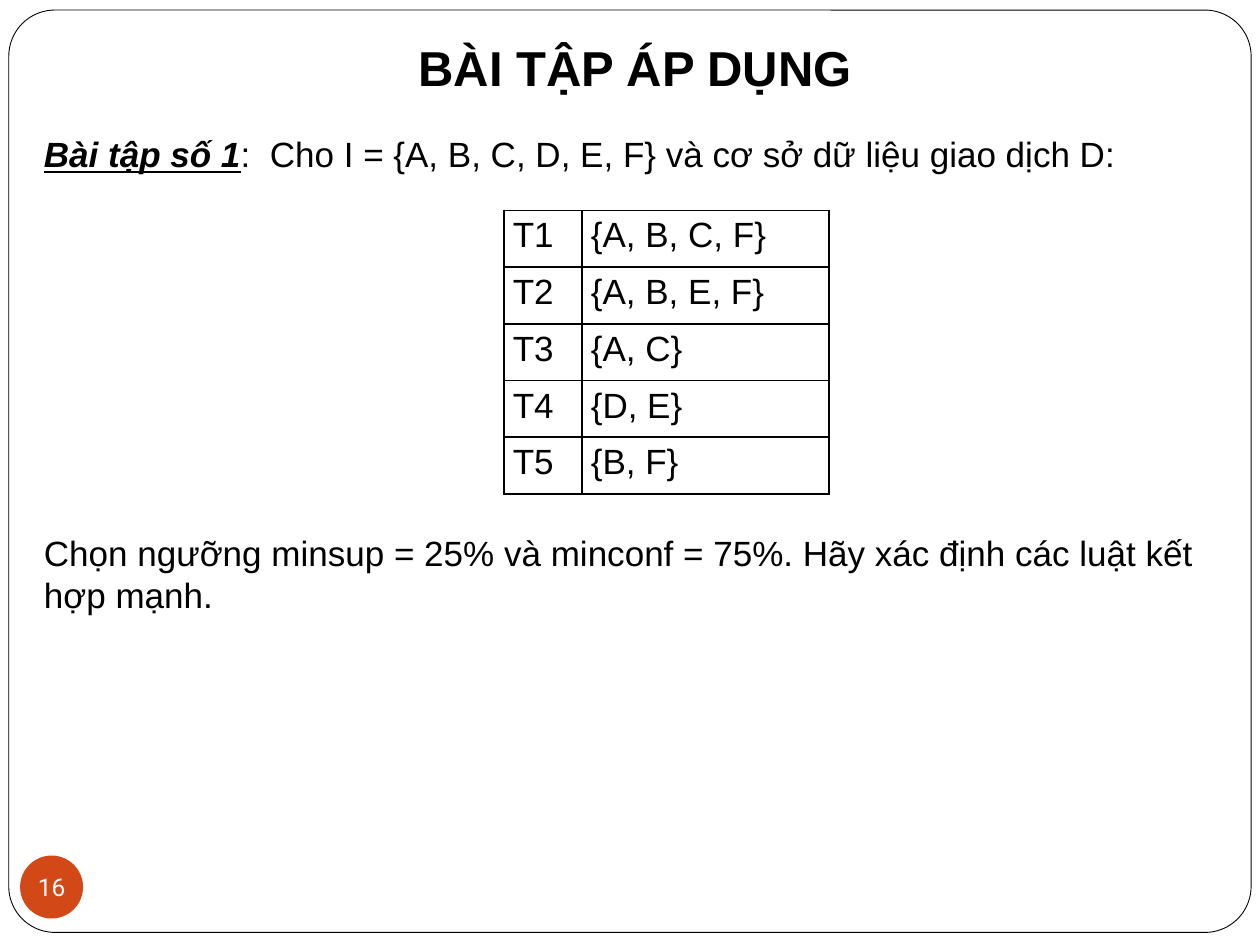
import pptx
import pptx.dml.color
import pptx.enum.shapes
import pptx.enum.text
import pptx.oxml
import pptx.oxml.ns
import pptx.util
from pptx.util import Inches

BLACK = pptx.dml.color.RGBColor(0x00, 0x00, 0x00)
WHITE = pptx.dml.color.RGBColor(0xFF, 0xFF, 0xFF)
ORANGE = pptx.dml.color.RGBColor(0xD3, 0x48, 0x17)
ALIGN = pptx.enum.text.PP_ALIGN
ANCHOR = pptx.enum.text.MSO_ANCHOR
SHAPE = pptx.enum.shapes.MSO_SHAPE

TRANSACTIONS = [
    ("T1", "{A, B, C, F}"),
    ("T2", "{A, B, E, F}"),
    ("T3", "{A, C}"),
    ("T4", "{D, E}"),
    ("T5", "{B, F}"),
]


def add_text(paragraph, text, size=20, font="Arial", color=BLACK,
             bold=False, italic=False, underline=False):
    run = paragraph.add_run()
    run.text = text
    run.font.size = pptx.util.Pt(size)
    run.font.name = font
    run.font.color.rgb = color
    run.font.bold = bold
    run.font.italic = italic
    run.font.underline = underline


def set_margins(target, horizontal, vertical):
    target.margin_left = target.margin_right = Inches(horizontal)
    target.margin_top = target.margin_bottom = Inches(vertical)


def add_frame(slide, left, top, width, height):
    frame = slide.shapes.add_shape(SHAPE.ROUNDED_RECTANGLE, left, top, width, height)
    frame.adjustments[0] = 0.05
    frame.shadow.inherit = False
    frame.fill.solid()
    frame.fill.fore_color.rgb = WHITE
    frame.line.color.rgb = BLACK
    frame.line.width = pptx.util.Pt(0.5)
    slide.shapes.title._element.addprevious(frame._element)


def add_page_number(slide, left, top, width, height, number):
    badge = slide.shapes.add_shape(SHAPE.OVAL, left, top, width, height)
    badge.shadow.inherit = False
    badge.fill.solid()
    badge.fill.fore_color.rgb = ORANGE
    badge.line.fill.background()
    text_frame = badge.text_frame
    text_frame.word_wrap = False
    text_frame.vertical_anchor = ANCHOR.MIDDLE
    set_margins(text_frame, 0, 0)
    text_frame.paragraphs[0].alignment = ALIGN.CENTER
    add_text(text_frame.paragraphs[0], str(number), size=14, font="Roboto", color=WHITE)


def place_title(slide, left, top, width, height, text):
    title = slide.shapes.title
    title.left, title.top, title.width, title.height = left, top, width, height
    title.text_frame.auto_size = pptx.enum.text.MSO_AUTO_SIZE.NONE
    title.text_frame.vertical_anchor = ANCHOR.TOP
    set_margins(title.text_frame, 0.1, 0.05)
    paragraph = title.text_frame.paragraphs[0]
    paragraph.alignment = ALIGN.CENTER
    add_text(paragraph, text, size=28, bold=True)


def add_statement(slide, left, top, width, height, text, label=""):
    text_frame = slide.shapes.add_textbox(left, top, width, height).text_frame
    text_frame.word_wrap = True
    text_frame.vertical_anchor = ANCHOR.MIDDLE
    paragraph = text_frame.paragraphs[0]
    if label:
        add_text(paragraph, label, bold=True, italic=True, underline=True)
    add_text(paragraph, text)


def add_cell_borders(cell):
    properties = cell._tc.get_or_add_tcPr()
    for position, side in enumerate(("lnL", "lnR", "lnT", "lnB")):
        border = pptx.oxml.parse_xml(
            f'<a:{side} {pptx.oxml.ns.nsdecls("a")} w="12700"><a:solidFill>'
            f'<a:srgbClr val="{BLACK}"/></a:solidFill></a:{side}>')
        properties.insert(position, border)


def add_transactions(slide, left, top, width, height, rows):
    table = slide.shapes.add_table(len(rows), 2, left, top, width, height).table
    table.first_row = False
    table.horz_banding = False
    table.columns[0].width = Inches(0.62)
    table.columns[1].width = width - Inches(0.62)
    for row_index, row in enumerate(rows):
        for column_index, text in enumerate(row):
            cell = table.cell(row_index, column_index)
            cell.fill.background()
            set_margins(cell, 0.07, 0)
            paragraph = cell.text_frame.paragraphs[0]
            paragraph.line_spacing = 1.15
            add_text(paragraph, text)
            add_cell_borders(cell)


def main():
    presentation = pptx.Presentation()
    presentation.slide_width = Inches(10)
    presentation.slide_height = Inches(7.5)
    slide = presentation.slides.add_slide(presentation.slide_layouts[5])

    add_frame(slide, Inches(0.07), Inches(0.08), Inches(9.86), Inches(7.32))
    add_page_number(slide, Inches(0.16), Inches(6.79), Inches(0.5), Inches(0.5), 16)
    place_title(slide, Inches(0.33), Inches(0.25), Inches(9.42), Inches(0.57),
                "BÀI TẬP ÁP DỤNG")
    add_statement(slide, Inches(0.25), Inches(1), Inches(9.42), Inches(0.44),
                  ":  Cho I = {A, B, C, D, E, F} và cơ sở dữ liệu giao dịch D:",
                  label="Bài tập số 1")
    add_transactions(slide, Inches(4), Inches(1.67), Inches(2.58), Inches(2.25),
                     TRANSACTIONS)
    add_statement(slide, Inches(0.25), Inches(4.17), Inches(9.42), Inches(0.77),
                  "Chọn ngưỡng minsup = 25% và minconf = 75%. "
                  "Hãy xác định các luật kết hợp mạnh.")
    presentation.save("out.pptx")


if __name__ == "__main__":
    main()
